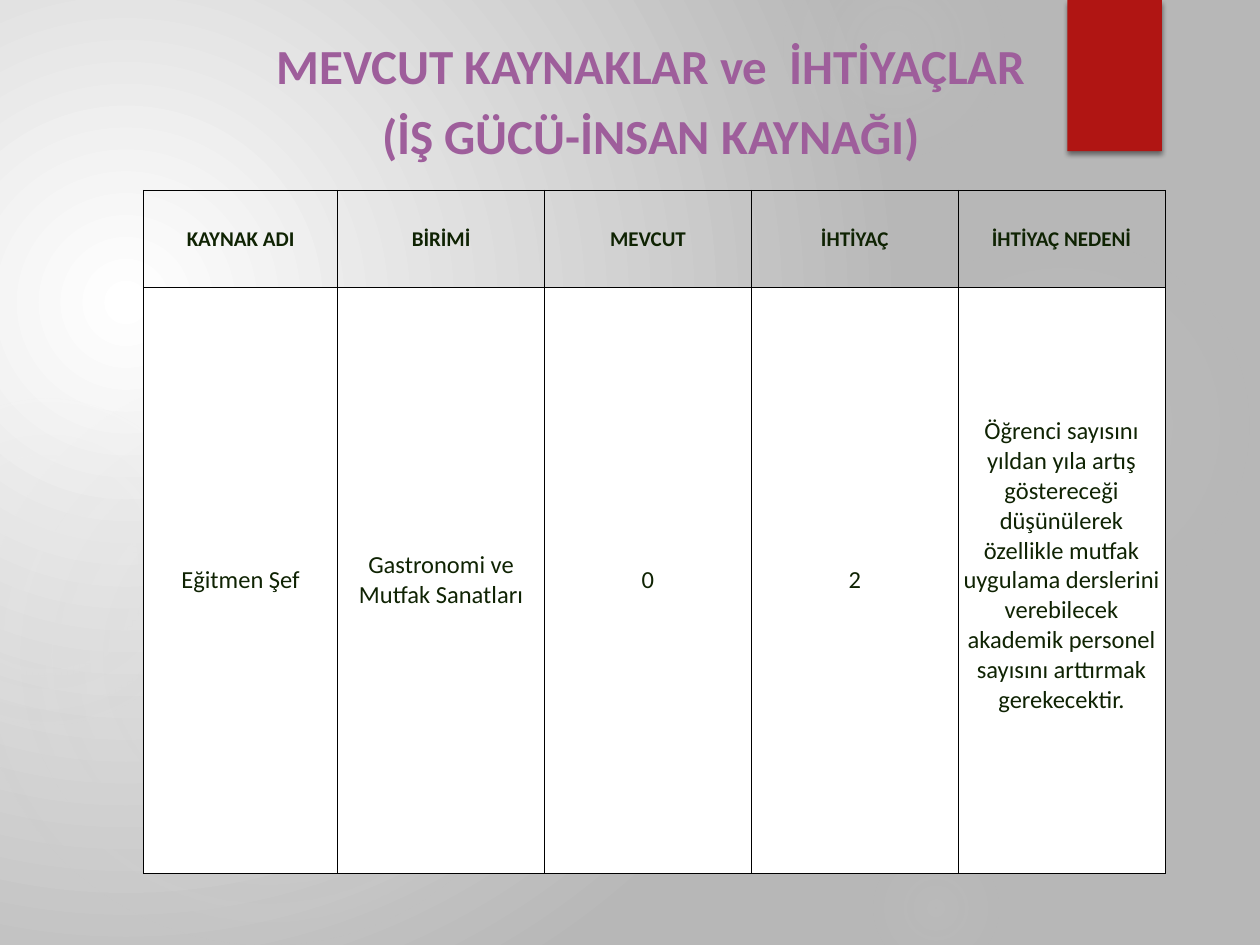
"""Build the slide on existing staff resources and needs."""
from lxml import etree
from pptx import Presentation
from pptx.dml.color import RGBColor
from pptx.enum.shapes import MSO_SHAPE
from pptx.enum.text import MSO_ANCHOR, PP_ALIGN
from pptx.oxml import parse_xml
from pptx.oxml.ns import nsdecls, qn
from pptx.util import Pt

OVAL, RECT = MSO_SHAPE.OVAL, MSO_SHAPE.RECTANGLE
MIDDLE, BOTTOM = MSO_ANCHOR.MIDDLE, MSO_ANCHOR.BOTTOM
CENTER = PP_ALIGN.CENTER


def rgb(value):
    return RGBColor.from_string(value)


def write(p, text, size, color, bold=False, after=0):
    p.alignment = CENTER
    p.space_after = Pt(after)
    r = p.add_run()
    r.text = text
    r.font.name = "Calibri"
    r.font.size = Pt(size)
    r.font.bold = bold
    r.font.color.rgb = rgb(color)


prs = Presentation()
prs.slide_width, prs.slide_height = Pt(720), Pt(540)
s = prs.slides.add_slide(prs.slide_layouts[6])

s.background.fill.gradient()
gradients = [(s.element.xpath(".//p:bgPr/a:gradFill")[0],
              [(0, "FFFFFF", 100), (100, "B7B7B7", 100)], (45, 65, 125, 100))]

glows = [
    (496, 132, 222, 7, 6, 69),
    (448, -36, 126, 14, 7, 73),
    (496, 480, 78, 9, 5, 66),
    (-12, 210, 330, 11, 10, 75),
    (-66, 228, 186, 8, 8, 72),
]
for left, top, size, inner, mid, edge in glows:
    sp = s.shapes.add_shape(OVAL, Pt(left), Pt(top), Pt(size), Pt(size))
    sp.shadow.inherit = False
    sp.line.fill.background()
    sp.fill.gradient()
    stops = [(0, "D9D9D9", inner), (36, "D9D9D9", mid), (edge, "D9D9D9", 0)]
    gradients.append((sp.element.xpath(".//a:gradFill")[0], stops, (50, 50, 50, 50)))

for grad, stops, focus in gradients:
    for child in list(grad):
        grad.remove(child)
    gs_list = etree.SubElement(grad, qn("a:gsLst"))
    for pos, color, alpha in stops:
        gs = etree.SubElement(gs_list, qn("a:gs"), pos=str(pos * 1000))
        clr = etree.SubElement(gs, qn("a:srgbClr"), val=color)
        etree.SubElement(clr, qn("a:alpha"), val=str(alpha * 1000))
    path = etree.SubElement(grad, qn("a:path"), path="circle")
    sides = {side: str(value * 1000) for side, value in zip("ltrb", focus)}
    etree.SubElement(path, qn("a:fillToRect"), sides)

sp = s.shapes.add_shape(RECT, Pt(610), Pt(0), Pt(54), Pt(86.4))
sp.fill.solid()
sp.fill.fore_color.rgb = rgb("B01513")
sp.line.fill.background()
sp.shadow.inherit = False
sp.element.xpath(".//a:effectLst")[0].append(parse_xml(
    f'<a:outerShdw {nsdecls("a")} blurRad="38100" dist="25400" dir="5400000">'
    '<a:srgbClr val="000000"><a:alpha val="45000"/></a:srgbClr></a:outerShdw>'))

tf = s.shapes.add_textbox(Pt(141), Pt(12.2), Pt(462), Pt(85)).text_frame
tf.word_wrap = True
tf.vertical_anchor = BOTTOM
write(tf.paragraphs[0], "MEVCUT KAYNAKLAR ve  İHTİYAÇLAR", 28, "9E5E9B", bold=True, after=6)
write(tf.add_paragraph(), "(İŞ GÜCÜ-İNSAN KAYNAĞI)", 28, "9E5E9B", bold=True, after=6)

rows = [
    ["KAYNAK ADI", "BİRİMİ", "MEVCUT", "İHTİYAÇ", "İHTİYAÇ NEDENİ"],
    ["Eğitmen Şef", "Gastronomi ve Mutfak Sanatları", "0", "2",
     "Öğrenci sayısını yıldan yıla artış göstereceği düşünülerek özellikle "
     "mutfak uygulama derslerini verebilecek akademik personel sayısını "
     "arttırmak gerekecektir."],
]
widths = [111] + [118.2] * 4
heights = [55.5, 334.8]
table = s.shapes.add_table(len(rows), len(widths), Pt(82), Pt(108.8),
                           Pt(sum(widths)), Pt(sum(heights))).table
table.first_row = table.horz_banding = False
for col, width in zip(table.columns, widths):
    col.width = Pt(width)
for row, height in zip(table.rows, heights):
    row.height = Pt(height)

for i, texts in enumerate(rows):
    header = i == 0
    for j, text in enumerate(texts):
        cell = table.cell(i, j)
        cell.vertical_anchor = MIDDLE
        cell.margin_left = cell.margin_right = cell.margin_top = cell.margin_bottom = 0
        write(cell.text_frame.paragraphs[0], text, 12 if header else 14, "0F2303", bold=header)
        tc_pr = cell._tc.get_or_add_tcPr()
        for side in ("lnL", "lnR", "lnT", "lnB"):
            tc_pr.append(parse_xml(
                f'<a:{side} {nsdecls("a")} w="6350"><a:solidFill>'
                f'<a:srgbClr val="000000"/></a:solidFill></a:{side}>'))
        if header:
            cell.fill.background()
        else:
            cell.fill.solid()
            cell.fill.fore_color.rgb = rgb("FFFFFF")
table.cell(1, 4).margin_bottom = Pt(17)

prs.save("out.pptx")
